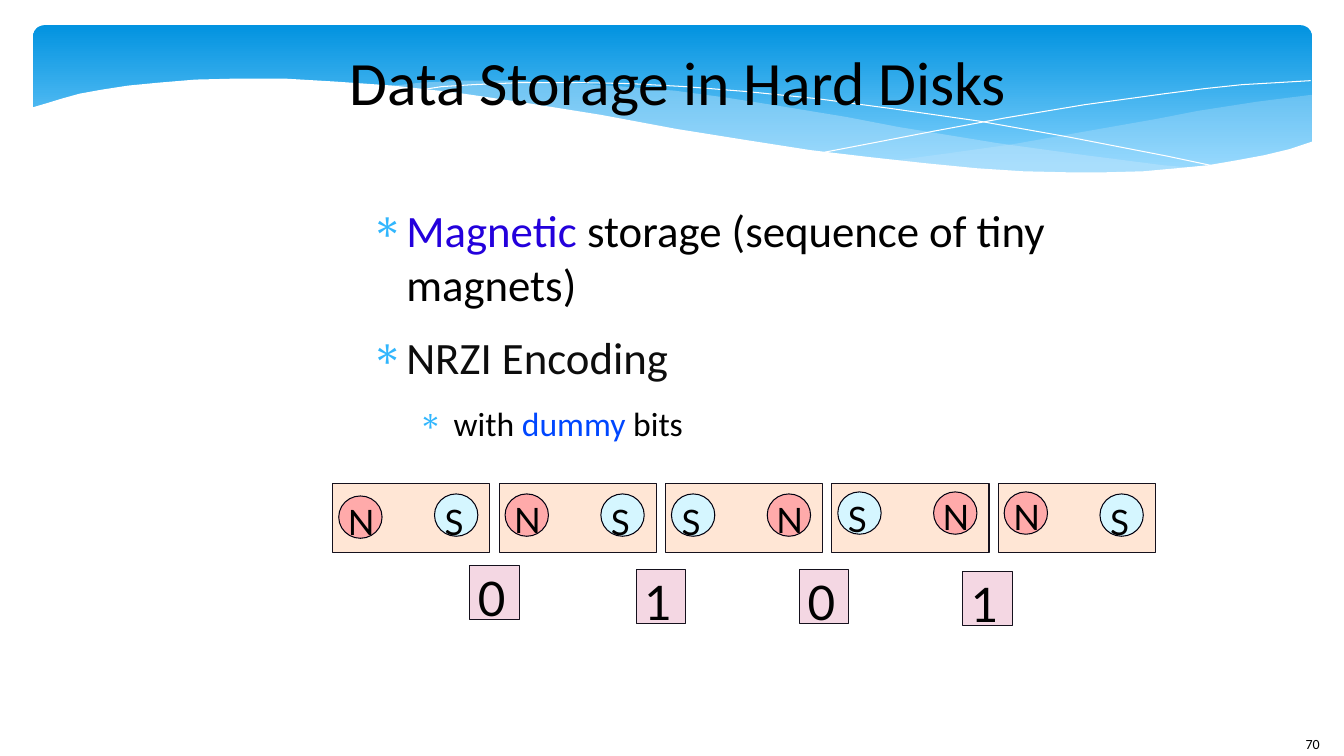
from lxml import etree
from pptx import Presentation
from pptx.dml.color import RGBColor
from pptx.enum.shapes import MSO_SHAPE
from pptx.enum.text import MSO_ANCHOR, MSO_AUTO_SIZE, PP_ALIGN
from pptx.oxml.ns import qn
from pptx.util import Inches, Pt

RECTANGLE = MSO_SHAPE.RECTANGLE
OVAL = MSO_SHAPE.OVAL
ROUNDED = MSO_SHAPE.ROUNDED_RECTANGLE
MIDDLE = MSO_ANCHOR.MIDDLE
CENTER = PP_ALIGN.CENTER
GROW = MSO_AUTO_SIZE.SHAPE_TO_FIT_TEXT

COLORS = {
    "black": "000000", "white": "FFFFFF", "sky": "0293E0", "pale_sky": "83D3FE",
    "wave": "C6E7FC", "bullet": "31B6FD", "violet": "2300DC", "blue": "0047FF",
    "charcoal": "0D0D0D", "magnet": "FFE6D5", "north": "FFAAAA", "south": "D5F6FF",
    "bit": "F4D7E3", "outline": "15111D", "pole_outline": "00000F",
}

RIGHT_WAVE = [
    (13.01, 0.94), (12.46, 1.01), (11.88, 1.1), (11.47, 1.18), (10.73, 1.31),
    (10.05, 1.43), (9.41, 1.52), (8.82, 1.6), (9.4, 1.65), (9.93, 1.69),
    (10.41, 1.72), (10.85, 1.72), (11.26, 1.71), (11.63, 1.69), (11.96, 1.65),
    (12.28, 1.6), (12.57, 1.54), (12.84, 1.47), (13.01, 1.42),
]
LONG_WAVE = [
    (11.9, 1.67), (11.54, 1.64), (10.76, 1.54), (9.89, 1.42), (8.91, 1.26),
    (8.39, 1.16), (7.78, 1.06), (7.21, 0.97), (6.69, 0.9), (6.19, 0.86),
    (5.6, 0.82), (5.06, 0.8), (4.59, 0.8), (4.18, 0.82), (3.82, 0.86),
    (4.31, 0.9), (4.83, 0.97), (5.39, 1.06), (5.99, 1.16), (7.06, 1.35),
    (7.79, 1.46), (8.46, 1.56), (9.07, 1.63), (9.63, 1.68), (10.14, 1.71),
    (10.61, 1.73), (11.04, 1.73), (11.43, 1.71),
]
FALLING_LINE = [
    (4.12, 0.9), (4.38, 0.86), (4.7, 0.84), (5.16, 0.82), (5.77, 0.82),
    (6.25, 0.83), (6.8, 0.86), (7.42, 0.91), (8.11, 0.98), (8.86, 1.08),
    (9.7, 1.2), (10.6, 1.36), (11.58, 1.55), (12.1, 1.66),
]
RISING_LINE = [
    (8.18, 1.51), (8.7, 1.41), (9.27, 1.3), (9.97, 1.17), (10.75, 1.04),
    (11.55, 0.93), (11.94, 0.88), (12.32, 0.84), (12.67, 0.82), (13, 0.8),
]
WHITE_EDGE = [
    (13.03, 1.4), (12.79, 1.48), (12.54, 1.54), (12.27, 1.59), (11.98, 1.64),
    (11.67, 1.67), (11.34, 1.7), (10.97, 1.71), (10.58, 1.71), (10.15, 1.7),
    (9.69, 1.67), (9.18, 1.62), (8.63, 1.56), (8.04, 1.49), (7.4, 1.39),
    (6.71, 1.28), (5.96, 1.14), (5.21, 1.02), (4.53, 0.92), (3.9, 0.85),
    (3.33, 0.81), (2.82, 0.78), (2.35, 0.78), (1.94, 0.79), (1.58, 0.82),
    (1.27, 0.85), (1.01, 0.89), (0.79, 0.93), (0.61, 0.98), (0.48, 1.02),
    (0.31, 1.07), (0.31, 2.24), (13.03, 2.24),
]

POLES = {"N": ("north", 0.23, 0.09), "S": ("south", 0.16, 0.1)}
MAGNETS = [
    (("N", 4.92, 4.97), ("S", 4.9, 4.97)),
    (("N", 4.9, 4.95), ("S", 4.9, 4.97)),
    (("S", 4.9, 4.97), ("N", 4.9, 4.95)),
    (("S", 4.88, 4.94), ("N", 4.88, 4.92)),
    (("N", 4.88, 4.92), ("S", 4.9, 4.97)),
]
BITS = [("0", 4.66, 5.61), ("1", 6.31, 5.65), ("0", 7.93, 5.65), ("1", 9.55, 5.67)]
BULLETS = [
    (0, 32, 14.1, [("Magnetic", "violet"),
                   (" storage (sequence of tiny magnets)", "black")]),
    (0, 32, 14.1, [("NRZI Encoding", "charcoal")]),
    (1, 24, 11.3, [("with ", "black"), ("dummy", "blue"), (" bits", "black")]),
]


def apply(target, values):
    for name, value in values.items():
        setattr(target, name, value)


def color(name):
    return RGBColor.from_string(COLORS[name])


class SlideBuilder:
    no_margins = dict.fromkeys(
        ("margin_left", "margin_top", "margin_right", "margin_bottom"), 0)

    def __init__(self, slide):
        self.slide = slide

    def paint(self, shape, fill=None, line=None, alpha=None):
        shape.shadow.inherit = False
        if fill:
            shape.fill.solid()
            shape.fill.fore_color.rgb = color(fill)
        else:
            shape.fill.background()
        if alpha:
            rgb = shape.fill._xPr.find(".//" + qn("a:srgbClr"))
            etree.SubElement(rgb, qn("a:alpha"), val=str(alpha * 1000))
        if line:
            shape.line.color.rgb = color(line)
            shape.line.width = Pt(0)
        else:
            shape.line.fill.background()

    def shape(self, kind, box, fill, line=None):
        shape = self.slide.shapes.add_shape(kind, *map(Inches, box))
        self.paint(shape, fill, line)
        return shape

    def banner(self, box):
        shape = self.shape(ROUNDED, box, "sky")
        shape.adjustments[0] = 0.071
        shape.fill.gradient()
        shape.fill.gradient_angle = 270
        stops = zip(shape.fill.gradient_stops, (0, 0.9), ("sky", "pale_sky"))
        for stop, position, name in stops:
            stop.position = position
            stop.color.rgb = color(name)

    def outline(self, points, closed=True, **style):
        corners = [(Inches(x), Inches(y)) for x, y in points]
        builder = self.slide.shapes.build_freeform(*corners[0])
        builder.add_line_segments(corners[1:], close=closed)
        self.paint(builder.convert_to_shape(), **style)

    def frame(self, box, **values):
        frame = self.slide.shapes.add_textbox(*map(Inches, box)).text_frame
        apply(frame, {"word_wrap": True, **values})
        return frame

    def run(self, paragraph, text, size, name="black", font="Calibri"):
        run = paragraph.add_run()
        run.text = text
        apply(run.font, {"size": Pt(size), "name": font})
        run.font.color.rgb = color(name)

    def label(self, text, box, size, font="Calibri", align=None, **values):
        paragraph = self.frame(box, **values).paragraphs[0]
        paragraph.alignment = align
        self.run(paragraph, text, size, font=font)

    def symbol(self, text, box, size):
        self.label(text, box, size, "Lato",
                   **{**self.no_margins, "word_wrap": False, "auto_size": GROW})

    def bullets(self, box, items):
        frame = self.frame(box, **self.no_margins)
        for index, (level, size, after, runs) in enumerate(items):
            paragraph = frame.add_paragraph() if index else frame.paragraphs[0]
            apply(paragraph, {"level": level, "space_after": Pt(after)})
            properties = paragraph._p.get_or_add_pPr()
            properties.set("marL", str(Inches(0.47 * (level + 1))))
            properties.set("indent", str(Inches(-0.35)))
            bullet_color = etree.SubElement(properties, qn("a:buClr"))
            etree.SubElement(bullet_color, qn("a:srgbClr"), val=COLORS["bullet"])
            etree.SubElement(properties, qn("a:buFont"), typeface="Symbol")
            etree.SubElement(properties, qn("a:buChar"), char="∗")
            for text, name in runs:
                self.run(paragraph, text, size, name)

    def magnet(self, left, poles):
        self.shape(RECTANGLE, (left, 4.8, 1.56, 0.68), "magnet", "outline")
        for offset, (letter, top, letter_top) in zip((0.06, 1.01), poles):
            fill, width, inset = POLES[letter]
            x = left + offset
            self.shape(OVAL, (x, top, 0.43, 0.42), fill, "pole_outline")
            self.symbol(letter, (x + inset, letter_top, width, 0.42), 25)

    def bit(self, digit, left, top):
        self.shape(RECTANGLE, (left, top, 0.49, 0.54), "bit", "outline")
        self.symbol(digit, (left + 0.08, top + 0.03, 0.24, 0.57), 34)


def main():
    presentation = Presentation()
    apply(presentation, {"slide_width": Inches(13.33), "slide_height": Inches(7.5)})
    builder = SlideBuilder(presentation.slides.add_slide(presentation.slide_layouts[6]))
    builder.banner((0.33, 0.25, 12.68, 1.56))
    builder.outline(RIGHT_WAVE, fill="wave", alpha=29)
    builder.outline(LONG_WAVE, fill="wave", alpha=40)
    for points in (FALLING_LINE, RISING_LINE):
        builder.outline(points, closed=False, line="white")
    builder.outline(WHITE_EDGE, fill="white")
    builder.label("70", (12.85, 7.25, 0.82, 0.4), 10)
    builder.label("Data Storage in Hard Disks", (2.67, 0.43, 8.11, 0.74), 44,
                  align=CENTER, vertical_anchor=MIDDLE, auto_size=GROW,
                  **builder.no_margins)
    builder.bullets((3.56, 2.01, 8.11, 2.34), BULLETS)
    for index, poles in enumerate(MAGNETS):
        builder.magnet(3.3 + 1.65 * index, poles)
    for bit in BITS:
        builder.bit(*bit)
    presentation.save("out.pptx")


if __name__ == "__main__":
    main()
